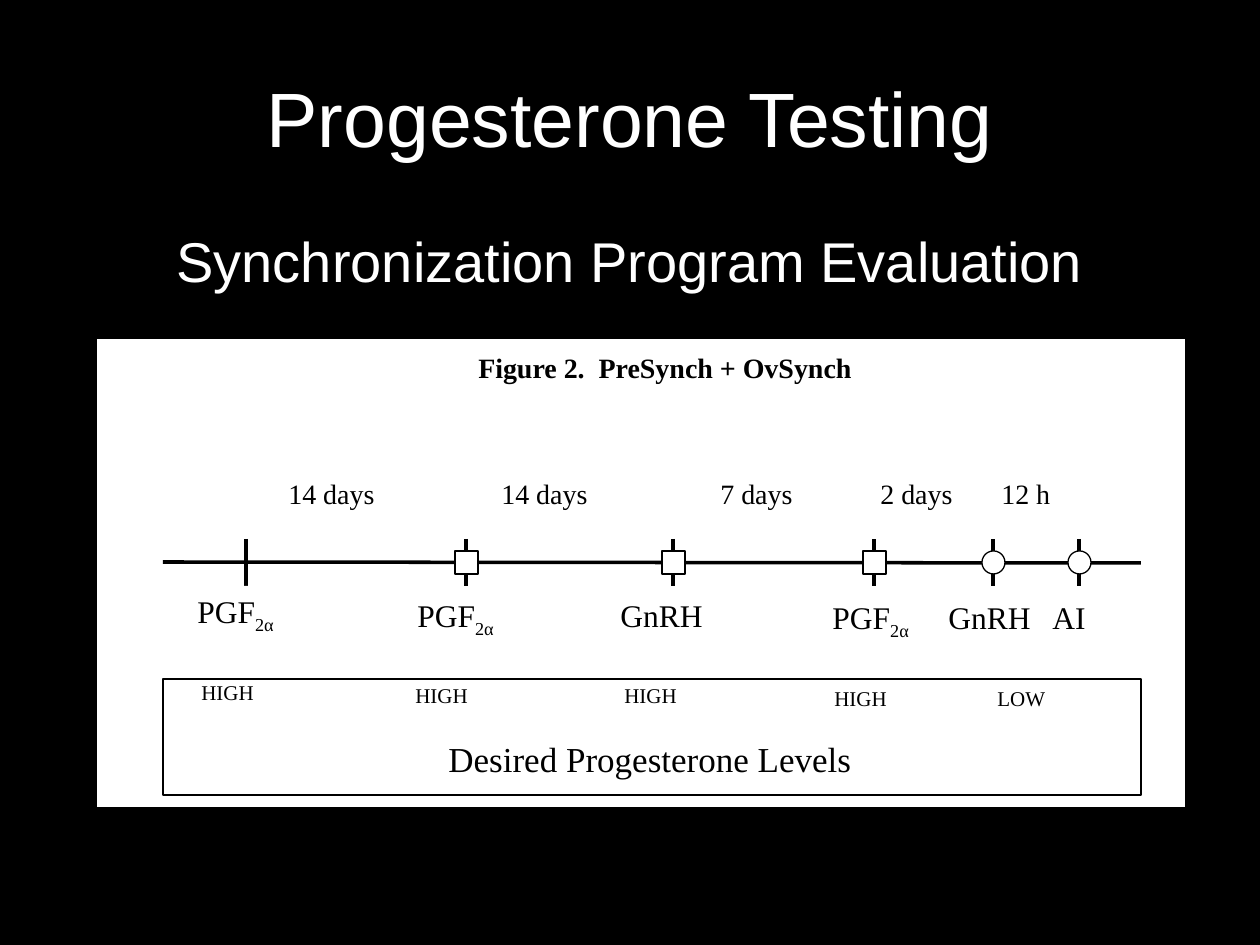
"""Build the Progesterone Testing slide with its PreSynch + OvSynch timeline."""
import pptx
import pptx.dml.color
import pptx.enum.shapes
import pptx.enum.text
import pptx.oxml.ns
import pptx.util
from lxml import etree

SCALE = 914400 / 126
COLORS = {"black": "000000", "white": "FFFFFF"}
SHAPES = pptx.enum.shapes.MSO_SHAPE
ALIGN = pptx.enum.text.PP_ALIGN
ANCHOR = pptx.enum.text.MSO_ANCHOR
RGB = {name: pptx.dml.color.RGBColor.from_string(value) for name, value in COLORS.items()}

presentation = pptx.Presentation()
presentation.slide_width, presentation.slide_height = [round(px * SCALE) for px in (1260, 945)]
slide = presentation.slides.add_slide(presentation.slide_layouts[6])
slide.background.fill.solid()
slide.background.fill.fore_color.rgb = RGB["black"]


def add_box(kind, box, line_width=0, filled=True):
    shape = slide.shapes.add_shape(kind, *[round(px * SCALE) for px in box])
    shape.shadow.inherit = False
    if filled:
        shape.fill.solid()
        shape.fill.fore_color.rgb = RGB["white"]
    else:
        shape.fill.background()
    if line_width:
        shape.line.color.rgb = RGB["black"]
        shape.line.width = pptx.util.Pt(line_width)
    else:
        shape.line.fill.background()
    return shape


def write_text(shape, text, size, font="Times New Roman", color="black", align=ALIGN.LEFT,
               anchor=ANCHOR.TOP, bold=False, subscript=""):
    frame = shape.text_frame
    frame.text = text
    frame.word_wrap = True
    frame.vertical_anchor = anchor
    paragraph = frame.paragraphs[0]
    paragraph.alignment = align
    if subscript:
        run = paragraph.add_run()
        run.text = subscript
        run._r.get_or_add_rPr().set("baseline", "-25000")
    for run in paragraph.runs:
        run.font.name = font
        run.font.size = pptx.util.Pt(size)
        run.font.bold = bold
        run.font.color.rgb = RGB[color]
    return paragraph


headings = [
    ("Progesterone Testing", 38, 157, 44, ANCHOR.MIDDLE, 0),
    ("Synchronization Program Evaluation", 220, 87, 32, ANCHOR.TOP, 4),
]
for text, top, height, size, anchor, space in headings:
    box = slide.shapes.add_textbox(*[round(px * SCALE) for px in (63, top, 1134, height)])
    paragraph = write_text(box, text, size, "Arial", "white", ALIGN.CENTER, anchor)
    paragraph.space_before = pptx.util.Pt(space)

add_box(SHAPES.RECTANGLE, (95, 337, 1092, 472), 2)

tick_centers = [246, 466, 673, 874, 993, 1079]
timeline = (163, 562, 1141, 563)
ticks = [(center, 539, center, 586) for center in tick_centers]
for ends in [timeline] + ticks:
    connector = slide.shapes.add_connector(
        pptx.enum.shapes.MSO_CONNECTOR.STRAIGHT, *[round(px * SCALE) for px in ends])
    connector.line.color.rgb = RGB["black"]
    connector.line.width = pptx.util.Pt(2)
    properties = connector._element.spPr
    etree.SubElement(properties, pptx.oxml.ns.qn("a:effectLst"))

labels = [
    ("2 days", "", 868, 470, 136, 16),
    ("PGF", "2α", 185, 586, 136, 18),
    ("PGF", "2α", 820, 592, 136, 18),
    ("PGF", "2α", 405, 590, 136, 18),
    ("GnRH", "", 608, 590, 136, 18),
    ("GnRH", "", 936, 592, 116, 18),
    ("AI", "", 1040, 592, 91, 18),
    ("12 h", "", 989, 470, 91, 16),
    ("14 days", "", 276, 470, 136, 16),
    ("14 days", "", 489, 470, 136, 16),
    ("7 days", "", 708, 470, 136, 16),
    ("HIGH", "", 403, 676, 136, 12),
    ("HIGH", "", 189, 673, 136, 12),
    ("HIGH", "", 612, 676, 136, 12),
    ("HIGH", "", 822, 679, 136, 12),
    ("LOW", "", 985, 679, 136, 12),
    ("Desired Progesterone Levels", "", 436, 731, 523, 20),
]
for text, subscript, left, top, width, size in labels:
    label = add_box(SHAPES.RECTANGLE, (left, top, width, 69))
    write_text(label, text, size, subscript=subscript)

add_box(SHAPES.RECTANGLE, (163, 679, 978, 116), 1, filled=False)

marker_kinds = [SHAPES.RECTANGLE] * 3 + [SHAPES.OVAL] * 2
for kind, center in zip(marker_kinds, tick_centers[1:]):
    add_box(kind, (center - 11, 551, 23, 23), 0.75)

caption = add_box(SHAPES.RECTANGLE, (312, 344, 706, 69))
write_text(caption, "Figure 2.  PreSynch + OvSynch", 16, align=ALIGN.CENTER, bold=True)

presentation.save("out.pptx")
